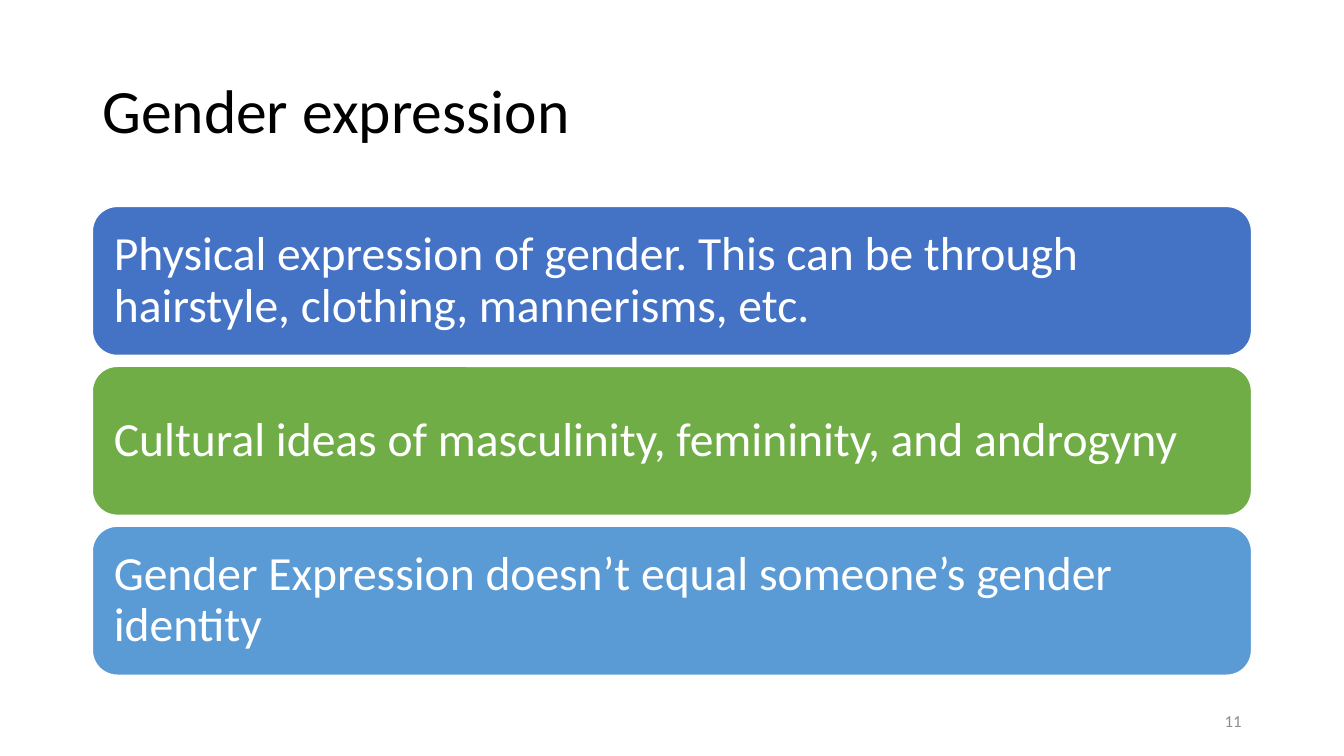
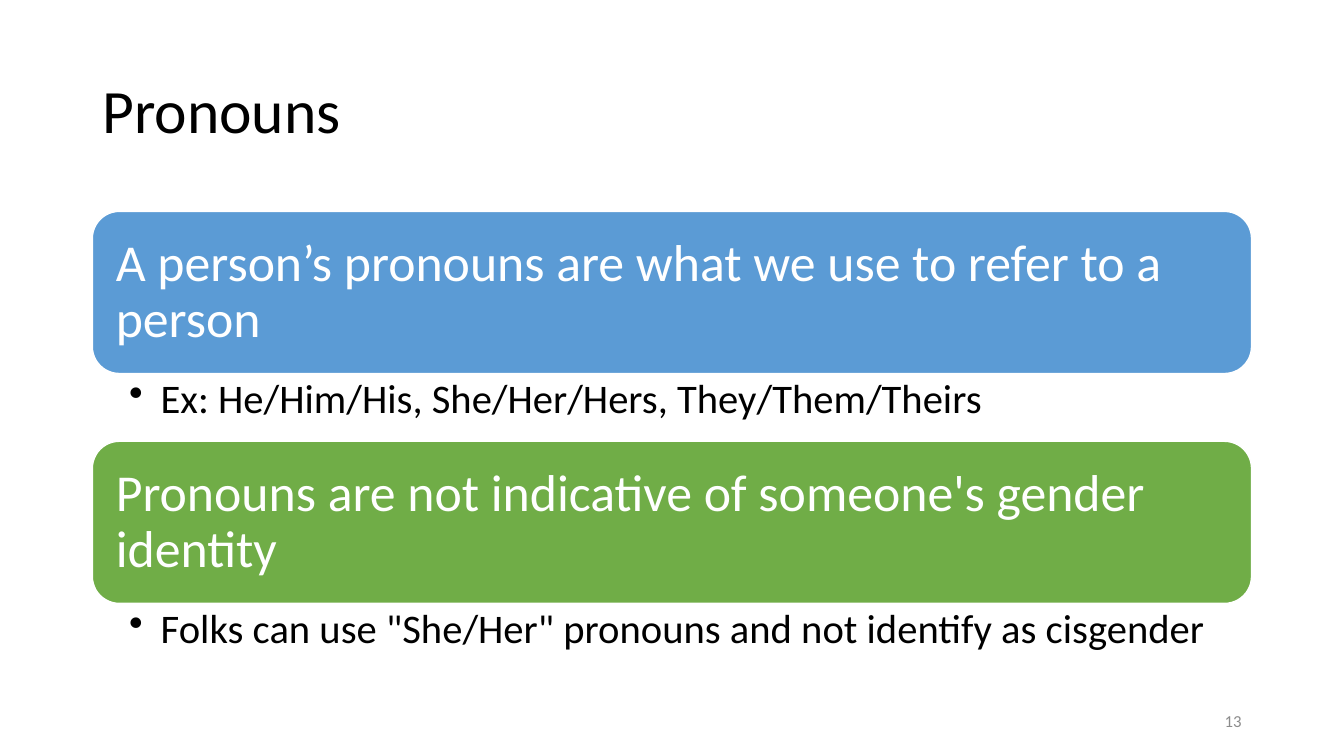
import pptx
import pptx.dml.color
import pptx.enum.shapes
import pptx.enum.text
import pptx.util
from lxml import etree

Pt = pptx.util.Pt
ALIGN = pptx.enum.text.PP_ALIGN
ANCHOR = pptx.enum.text.MSO_ANCHOR

# Shared style
FONT = "Calibri"
BLACK, WHITE, GRAY = "000000", "FFFFFF", "8C8C8C"
BLUE, GREEN, SKY = "4472C4", "70AD47", "5B9BD5"
LEFT, WIDTH = 66, 828

# Per slide: title, page number, text size, first top, card height, step,
# and the cards as (fill, text, note below)
SLIDES = [
    ("Gender expression", "11", 34, 147.5, 106.4, 114.2, [
        (BLUE, "Physical expression of gender. This can be through "
               "hairstyle, clothing, mannerisms, etc.", None),
        (GREEN, "Cultural ideas of masculinity, femininity, and androgyny", None),
        (SKY, "Gender Expression doesn’t equal someone’s gender identity", None),
    ]),
    ("Pronouns", "13", 37, 151, 115.8, 164.2, [
        (SKY, "A person’s pronouns are what we use to refer to a person",
         "Ex: He/Him/His, She/Her/Hers, They/Them/Theirs"),
        (GREEN, "Pronouns are not indicative of someone's gender identity",
         "Folks can use \"She/Her\" pronouns and not identify as cisgender"),
    ]),
]
NOTE_HEIGHT, NOTE_SIZE, NOTE_INDENT = 48.2, 29, 22.5


def rgb(color):
    return pptx.dml.color.RGBColor.from_string(color)


def write(shape, text, size, color, insets=(7.2, 3.6, 7.2, 3.6),
          anchor=ANCHOR.MIDDLE, align=ALIGN.LEFT, spacing=0.9):
    """Fill a shape with one styled paragraph and return the paragraph."""
    frame = shape.text_frame
    frame.word_wrap = True
    frame.vertical_anchor = anchor
    frame.margin_left, frame.margin_top, frame.margin_right, frame.margin_bottom = map(Pt, insets)
    paragraph = frame.paragraphs[0]
    paragraph.alignment = align
    paragraph.line_spacing = spacing
    run = paragraph.add_run()
    run.text = text
    run.font.name = FONT
    run.font.size = Pt(size)
    run.font.color.rgb = rgb(color)
    return paragraph


presentation = pptx.Presentation()
presentation.slide_width, presentation.slide_height = Pt(960), Pt(540)

for title, number, size, first_top, height, step, cards in SLIDES:
    slide = presentation.slides.add_slide(presentation.slide_layouts[6])
    shapes = slide.shapes

    # Title and page number
    title_box = shapes.add_textbox(Pt(LEFT), Pt(28.8), Pt(WIDTH), Pt(104.4))
    write(title_box, title, 44, BLACK)
    number_box = shapes.add_textbox(Pt(678), Pt(500.5), Pt(216), Pt(28.8))
    write(number_box, number, 12, GRAY, align=ALIGN.RIGHT, spacing=1.0)

    # Stacked cards
    for index, (fill, text, note) in enumerate(cards):
        top = first_top + index * step
        card = shapes.add_shape(pptx.enum.shapes.MSO_SHAPE.ROUNDED_RECTANGLE,
                                Pt(LEFT), Pt(top), Pt(WIDTH), Pt(height))
        card.shadow.inherit = False
        card.fill.solid()
        card.fill.fore_color.rgb = rgb(fill)
        card.line.color.rgb = rgb(WHITE)
        card.line.width = Pt(1)
        write(card, text, size, WHITE, insets=[0.3 * size] * 4)

        # Bulleted note under the card
        if note:
            note_box = shapes.add_textbox(Pt(LEFT), Pt(top + height), Pt(WIDTH), Pt(NOTE_HEIGHT))
            paragraph = write(note_box, note, NOTE_SIZE, BLACK,
                              insets=(26.3, 3.6, 20.6, 3.6), anchor=ANCHOR.TOP)
            properties = paragraph._p.get_or_add_pPr()
            properties.set("marL", str(Pt(NOTE_INDENT)))
            properties.set("indent", str(-Pt(NOTE_INDENT)))
            bullet = etree.SubElement(properties, pptx.oxml.ns.qn("a:buChar"))
            bullet.set("char", "•")

presentation.save("out.pptx")
